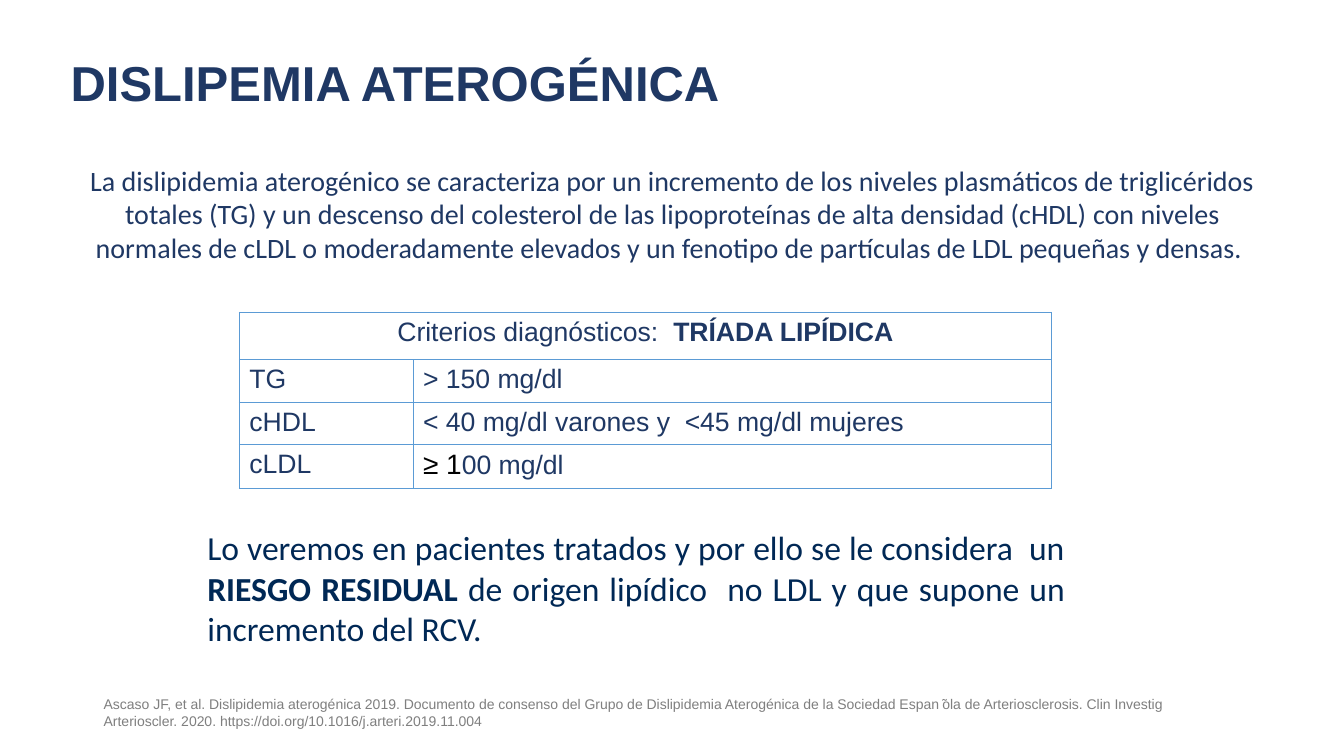
from dataclasses import dataclass

from lxml import etree
from pptx import Presentation
from pptx.dml.color import RGBColor as RGB
from pptx.enum.text import MSO_ANCHOR as Anchor, MSO_AUTO_SIZE as AutoSize, PP_ALIGN as Align
from pptx.oxml.ns import qn
from pptx.util import Pt


@dataclass(frozen=True)
class Theme:
    navy: str = "1F3864"
    deep_blue: str = "002855"
    grey: str = "7F7F7F"
    black: str = "000000"
    border: str = "5B9BD5"
    heading_font: str = "Arial"
    text_font: str = "Calibri"
    title_size: int = 35
    message_size: int = 24
    intro_size: int = 20
    table_size: int = 19
    source_size: int = 10


theme = Theme()


def write(frame, text, size, color=theme.navy, font=theme.heading_font, bold=False,
          align=Align.LEFT, inset=(7.2, 3.6), anchor=Anchor.TOP):
    """Append text to the frame's paragraph as one formatted run."""
    frame.word_wrap = True
    frame.vertical_anchor = anchor
    frame.margin_left = frame.margin_right = Pt(inset[0])
    frame.margin_top = frame.margin_bottom = Pt(inset[1])
    paragraph = frame.paragraphs[0]
    paragraph.alignment = align
    run = paragraph.add_run()
    run.text = text
    run.font.size = Pt(size)
    run.font.name = font
    run.font.bold = bold
    run.font.color.rgb = RGB.from_string(color)


def outline(cell):
    """Draw the four borders of a table cell and leave it unfilled."""
    properties = cell._tc.get_or_add_tcPr()
    for side in ("lnL", "lnR", "lnT", "lnB"):
        line = etree.SubElement(properties, qn(f"a:{side}"), w=str(Pt(0.75)))
        fill = etree.SubElement(line, qn("a:solidFill"))
        etree.SubElement(fill, qn("a:srgbClr"), val=theme.border)
    cell.fill.background()


prs = Presentation()
prs.slide_width, prs.slide_height = Pt(960), Pt(540)
slide = prs.slides.add_slide(prs.slide_layouts[5])

# Title
title = slide.shapes.title
title.left, title.top, title.width, title.height = Pt(50.4), Pt(27.4), Pt(648), Pt(67.7)
title.text_frame.auto_size = AutoSize.NONE
write(title.text_frame, "DISLIPEMIA ATEROGÉNICA", theme.title_size, bold=True,
      inset=(0, 3.6), anchor=Anchor.MIDDLE)
title.text_frame.paragraphs[0].line_spacing = 0.9

# Definition
definition = slide.shapes.add_textbox(Pt(54.7), Pt(113), Pt(851), Pt(98)).text_frame
for text, size in (
    ("La dislipidemia aterogénico se caracteriza por un incremento de los niveles plasmáticos "
     "de triglicéridos totales (TG) y un descenso del colesterol de las lipoproteínas de alta "
     "densidad (cHDL)", theme.intro_size),
    (" ", theme.table_size),
    ("con niveles normales de cLDL o moderadamente elevados y un fenotipo de partículas de LDL "
     "pequeñas y densas. ", theme.intro_size),
):
    write(definition, text, size, font=theme.text_font, align=Align.CENTER)

# Diagnostic criteria
criteria = (("TG", "> 150 mg/dl"),
            ("cHDL", "< 40 mg/dl varones y  <45 mg/dl mujeres"),
            ("cLDL", "00 mg/dl"))
triad = slide.shapes.add_table(4, 2, Pt(171), Pt(223), Pt(580), Pt(125)).table
triad.first_row = triad.horz_banding = False
for column, width in zip(triad.columns, (124, 456)):
    column.width = Pt(width)
for row, height in zip(triad.rows, (34, 30.25, 30.25, 30.25)):
    row.height = Pt(height)
for cell in triad.iter_cells():
    outline(cell)

heading = triad.cell(0, 0)
heading.merge(triad.cell(0, 1))
write(heading.text_frame, "Criterios diagnósticos:  ", theme.table_size, align=Align.CENTER)
write(heading.text_frame, "TRÍADA LIPÍDICA", theme.table_size, bold=True, align=Align.CENTER)

write(triad.cell(3, 1).text_frame, "≥ 1", theme.intro_size, color=theme.black)
for row, criterion in enumerate(criteria, start=1):
    for column, text in enumerate(criterion):
        write(triad.cell(row, column).text_frame, text, theme.table_size)

# Residual risk message
message = slide.shapes.add_textbox(Pt(141), Pt(369.4), Pt(627), Pt(101.5)).text_frame
for text, bold in (
    ("Lo veremos en pacientes tratados y por ello se le considera  un ", False),
    ("RIESGO RESIDUAL ", True),
    ("de origen lipídico  no LDL y que supone un incremento del RCV.", False),
):
    write(message, text, theme.message_size, color=theme.deep_blue, font=theme.text_font,
          bold=bold, align=Align.JUSTIFY, inset=(7.2, 7.2))

# Source
source = slide.shapes.add_textbox(Pt(67), Pt(493.2), Pt(816.5), Pt(31.7)).text_frame
write(source,
      "Ascaso JF, et al. Dislipidemia aterogénica 2019. Documento de consenso del Grupo de "
      "Dislipidemia Aterogénica de la Sociedad Espan ̃ola de Arteriosclerosis. Clin Investig "
      "Arterioscler. 2020. https://doi.org/10.1016/j.arteri.2019.11.004",
      theme.source_size, color=theme.grey)

prs.save("out.pptx")
